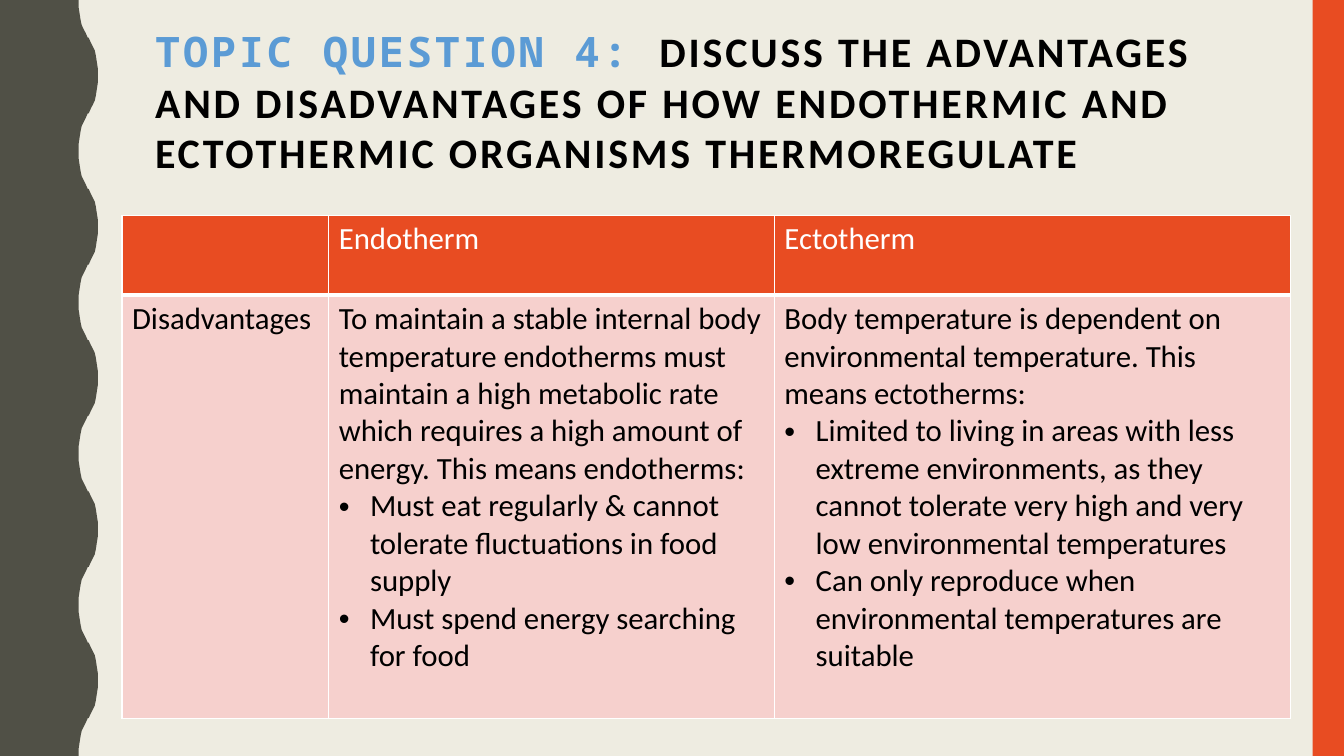
from lxml import etree
from pptx import Presentation
from pptx.dml.color import RGBColor
from pptx.enum.shapes import MSO_SHAPE
from pptx.enum.text import MSO_ANCHOR
from pptx.oxml.ns import qn
from pptx.util import Inches, Pt

RECTANGLE = MSO_SHAPE.RECTANGLE
MIDDLE = MSO_ANCHOR.MIDDLE

CREAM, OLIVE, ORANGE, PINK = "EEECE1", "505046", "E84C22", "F6D0CD"
BLUE, BLACK, WHITE = "5B9BD5", "000000", "FFFFFF"
BODY_FONT, MONO_FONT = "Calibri", "Noto Sans Mono"
BULLET_INDENT = Inches(0.31)

# First quarter of a wave, in hundredths of the slide's width and height.
WAVE_QUARTER = [(5.85, 0), (5.85, 0.93), (5.93, 1.87), (6, 2.67),
                (6.08, 3.33), (6.23, 3.87), (6.38, 4.4), (6.53, 5)]
WAVE_COUNT = 5

HEADINGS = ["", "Endotherm", "Ectotherm"]
DISADVANTAGES = [
    ["Disadvantages"],
    ["To maintain a stable internal body temperature endotherms must maintain "
     "a high metabolic rate which requires a high amount of energy. "
     "This means endotherms:",
     "Must eat regularly & cannot tolerate fluctuations in food supply",
     "Must spend energy searching for food"],
    ["Body temperature is dependent on environmental temperature. "
     "This means ectotherms:",
     "Limited to living in areas with less extreme environments, as they "
     "cannot tolerate very high and very low environmental temperatures",
     "Can only reproduce when environmental temperatures are suitable"],
]


def colour(hex_text):
    return RGBColor.from_string(hex_text)


def paint(fill, hex_text):
    fill.solid()
    fill.fore_color.rgb = colour(hex_text)


def add_text(paragraph, text, size=22, font=BODY_FONT, color=BLACK,
             bold=False, spacing=0):
    """Append one run; size and letter spacing are in points."""
    run = paragraph.add_run()
    run.text = text
    run.font.size = Pt(size)
    run.font.name = font
    run.font.bold = bold
    run.font.color.rgb = colour(color)
    if spacing:
        run.font._element.set("spc", str(spacing * 100))


def add_bullet(paragraph):
    properties = paragraph._p.get_or_add_pPr()
    properties.set("marL", str(BULLET_INDENT))
    properties.set("indent", str(-BULLET_INDENT))
    etree.SubElement(properties, qn("a:buFont"), typeface="Arial")
    etree.SubElement(properties, qn("a:buChar"), char="•")


def add_borders(cell, bottom):
    """Draw white cell borders, one point wide except at the bottom."""
    properties = cell._tc.get_or_add_tcPr()
    widths = {"a:lnL": 1, "a:lnR": 1, "a:lnT": 1, "a:lnB": bottom}
    for tag, width in widths.items():
        line = etree.SubElement(properties, qn(tag), w=str(Pt(width)))
        fill = etree.SubElement(line, qn("a:solidFill"))
        etree.SubElement(fill, qn("a:srgbClr"), val=WHITE)


def wave_points():
    """Mirror the quarter into a half, the half into a wave, and repeat it."""
    right = [(13.13 - x, 10 - y) for x, y in reversed(WAVE_QUARTER)]
    half = WAVE_QUARTER + right
    wave = half + [(x, 20 - y) for x, y in reversed(half)]
    return [(x, y + 20 * index) for index in range(WAVE_COUNT) for x, y in wave]


class SlideBuilder:
    """Places elements on a grid of 100 columns by 100 rows."""

    def __init__(self, presentation):
        self.column = presentation.slide_width / 100
        self.row = presentation.slide_height / 100
        self.slide = presentation.slides.add_slide(presentation.slide_layouts[6])
        paint(self.slide.background.fill, CREAM)

    def place(self, x, y):
        return round(x * self.column), round(y * self.row)

    def frame(self, left, top, width, height):
        return *self.place(left, top), *self.place(width, height)

    def finish(self, shape, color):
        shape.shadow.inherit = False
        paint(shape.fill, color)
        shape.line.fill.background()

    def rectangle(self, box, color):
        shape = self.slide.shapes.add_shape(RECTANGLE, *self.frame(*box))
        self.finish(shape, color)

    def outline(self, points, color):
        start, *others = [self.place(x, y) for x, y in points]
        builder = self.slide.shapes.build_freeform(*start)
        builder.add_line_segments(others, close=True)
        self.finish(builder.convert_to_shape(), color)

    def title(self, box, runs):
        frame = self.slide.shapes.add_textbox(*self.frame(*box)).text_frame
        frame.word_wrap = True
        frame.vertical_anchor = MIDDLE
        for text, style in runs:
            add_text(frame.paragraphs[0], text, size=30, bold=True, spacing=2,
                     **style)

    def cell(self, cell, lines, fill, color, bottom):
        """Fill a cell; every line after the first is a bullet."""
        add_borders(cell, bottom)
        paint(cell.fill, fill)
        frame = cell.text_frame
        for index, line in enumerate(lines):
            paragraph = frame.add_paragraph() if index else frame.paragraphs[0]
            if index:
                add_bullet(paragraph)
            add_text(paragraph, line, color=color)

    def table(self, left, top, widths, heights, headings, body):
        box = self.frame(left, top, sum(widths), sum(heights))
        table = self.slide.shapes.add_table(len(heights), len(widths), *box).table
        for column, width in zip(table.columns, widths):
            column.width = round(width * self.column)
        for row, height in zip(table.rows, heights):
            row.height = round(height * self.row)
        for index, (heading, lines) in enumerate(zip(headings, body)):
            heading_lines = [heading] if heading else []
            self.cell(table.cell(0, index), heading_lines, ORANGE, WHITE, bottom=3)
            self.cell(table.cell(1, index), lines, PINK, BLACK, bottom=1)


def main():
    presentation = Presentation()
    presentation.slide_width = Inches(13.33)
    presentation.slide_height = Inches(7.5)
    builder = SlideBuilder(presentation)
    builder.outline([(0, 0), *wave_points(), (0, 100)], OLIVE)
    builder.rectangle((97.67, 0, 2.33, 100), ORANGE)
    builder.table(9.08, 28.53, [15.38, 33.16, 38.41], [10.53, 56],
                  HEADINGS, DISADVANTAGES)
    builder.title((10.8, 2.53, 83.5, 21.73), [
        ("TOPIC QUESTION 4: ", {"font": MONO_FONT, "color": BLUE}),
        ("DISCUSS THE ADVANTAGES AND DISADVANTAGES OF HOW ENDOTHERMIC AND "
         "ECTOTHERMIC ORGANISMS THERMOREGULATE", {}),
    ])
    presentation.save("out.pptx")


if __name__ == "__main__":
    main()
